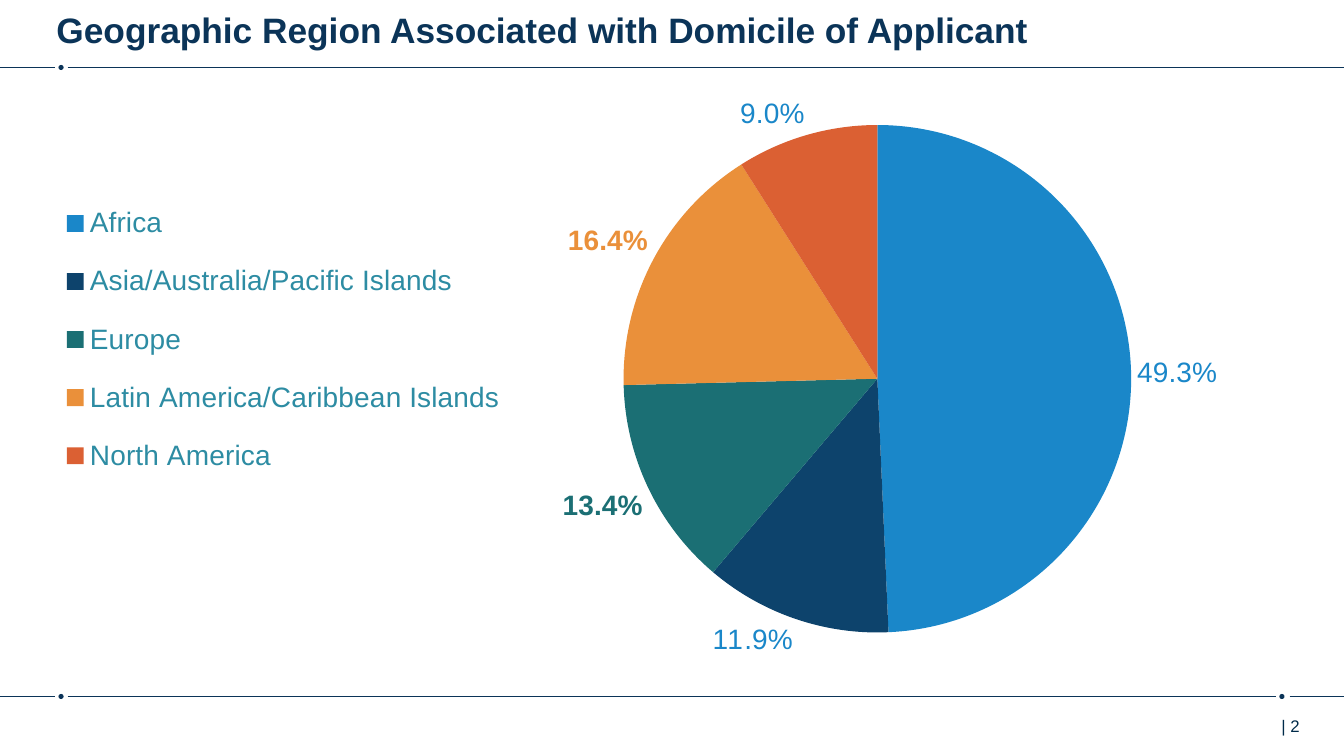
import pptx
import pptx.util
import pptx.chart.data
import pptx.dml.color
import pptx.enum.chart
import pptx.enum.shapes
import pptx.enum.text
import pptx.oxml
import pptx.oxml.ns

THEME = {
    "font": "Arial", "navy": "0B3458", "page": "002B49", "legend": "2D8CA3",
    "label": "1A87C9", "title_size": 25.2, "chart_size": 20, "page_size": 12,
}

presentation = pptx.Presentation()
presentation.slide_width = pptx.util.Inches(13.33)
presentation.slide_height = pptx.util.Inches(7.5)
slide = presentation.slides.add_slide(presentation.slide_layouts[5])
color = pptx.dml.color.RGBColor.from_string


def area(left, top, width, height):
    """Turn percentages of the slide into lengths."""
    across, down = presentation.slide_width / 100, presentation.slide_height / 100
    return [int(left * across), int(top * down), int(width * across), int(height * down)]


def set_font(font, size, hue, bold=False):
    values = {"name": THEME["font"], "size": pptx.util.Pt(size), "bold": bold}
    for name, value in values.items():
        setattr(font, name, value)
    font.color.rgb = color(hue)


# Rules broken by dots: height, line spans, dot centres
rules = [
    (8.93, [(0, 4.13), (5.03, 100)], [4.54]),
    (92.13, [(0, 4.13), (5.03, 94.97), (95.95, 100)], [4.54, 95.38]),
]
dot_width, dot_height = 0.38, 0.67
for height, spans, centres in rules:
    for start, end in spans:
        left, top, width, _ = area(start, height, end - start, 0)
        rule = slide.shapes.add_connector(
            pptx.enum.shapes.MSO_CONNECTOR.STRAIGHT, left, top, left + width, top)
        rule.line.color.rgb = color(THEME["navy"])
        rule.line.width = pptx.util.Pt(1)
        rule._element.spPr.append(pptx.oxml.parse_xml(
            f'<a:effectLst {pptx.oxml.ns.nsdecls("a")}/>'))
    for centre in centres:
        dot = slide.shapes.add_shape(
            pptx.enum.shapes.MSO_SHAPE.OVAL,
            *area(centre - dot_width / 2, height - dot_height / 2, dot_width, dot_height))
        dot.shadow.inherit = False
        dot.fill.solid()
        dot.fill.fore_color.rgb = color(THEME["navy"])
        dot.line.fill.background()

# Title and page number
title = slide.shapes.title
title.left, title.top, title.width, title.height = area(3.45, 0.67, 88.65, 6.53)
page = slide.shapes.add_textbox(*area(94.22, 94, 5.78, 5.33))
texts = [
    (title, "Geographic Region Associated with Domicile of Applicant",
     THEME["title_size"], THEME["navy"], True, pptx.enum.text.MSO_ANCHOR.MIDDLE),
    (page, "| 2", THEME["page_size"], THEME["page"], False, pptx.enum.text.MSO_ANCHOR.TOP),
]
for shape, words, size, hue, bold, anchor in texts:
    frame = shape.text_frame
    frame.text = words
    settings = {"word_wrap": True, "vertical_anchor": anchor,
                "auto_size": pptx.enum.text.MSO_AUTO_SIZE.NONE}
    for name, value in settings.items():
        setattr(frame, name, value)
    paragraph = frame.paragraphs[0]
    paragraph.alignment = pptx.enum.text.PP_ALIGN.LEFT
    set_font(paragraph.runs[0].font, size, hue, bold)
page.text_frame.margin_left = pptx.util.Inches(0.15)
page.text_frame.margin_right = 0

# Pie chart: region, share, slice colour, label colour, bold label
regions = [
    ("Africa", 0.493, "1A87C9", THEME["label"], False),
    ("Asia/Australia/Pacific Islands", 0.119, "0D436C", THEME["label"], False),
    ("Europe", 0.134, "1B6F74", "1B6F74", True),
    ("Latin America/Caribbean Islands", 0.164, "EA903A", "EA903A", True),
    ("North America", 0.09, "DB6033", THEME["label"], False),
]
data = pptx.chart.data.CategoryChartData(number_format="0.0%")
data.categories = [region[0] for region in regions]
data.add_series("Series 1", [region[1] for region in regions])
chart = slide.shapes.add_chart(
    pptx.enum.chart.XL_CHART_TYPE.PIE, *area(3.45, 10.53, 90.4, 79.07), data).chart
chart.has_title = False
set_font(chart.font, THEME["chart_size"], THEME["label"])
plot = chart.plots[0]
plot.vary_by_categories = True
plot.has_data_labels = True
outside = pptx.enum.chart.XL_LABEL_POSITION.OUTSIDE_END
label_values = {"show_value": True, "show_percentage": False, "number_format": "0.0%",
                "number_format_is_linked": False, "position": outside}
for name, value in label_values.items():
    setattr(plot.data_labels, name, value)
for index, (_, _, slice_color, label_color, bold) in enumerate(regions):
    point = plot.series[0].points[index]
    point.format.fill.solid()
    point.format.fill.fore_color.rgb = color(slice_color)
    point.format.line.fill.background()
    set_font(point.data_label.font, THEME["chart_size"], label_color, bold)
    point.data_label.position = outside

# Legend at the left, pie at the right
chart.has_legend = True
chart.legend.position = pptx.enum.chart.XL_LEGEND_POSITION.LEFT
chart.legend.include_in_layout = False
set_font(chart.legend.font, THEME["chart_size"], THEME["legend"])
chart_space = chart._chartSpace
layouts = [
    ("c:plotArea", 0, '<c:layoutTarget val="inner"/>', (0.475, 0.076, 0.418, 0.849)),
    ("c:legend", 1, "", (0, 0.17, 0.39, 0.53)),
]
for tag, place, target, shares in layouts:
    part = chart_space.find(f".//{pptx.oxml.ns.qn(tag)}")
    for old in part.findall(pptx.oxml.ns.qn("c:layout")):
        part.remove(old)
    modes = "".join(f'<c:{axis}Mode val="edge"/>' for axis in "xy")
    sizes = "".join(f'<c:{axis} val="{share}"/>' for axis, share in zip("xywh", shares))
    part.insert(place, pptx.oxml.parse_xml(
        f'<c:layout {pptx.oxml.ns.nsdecls("c")}><c:manualLayout>'
        f"{target}{modes}{sizes}</c:manualLayout></c:layout>"))

presentation.save("out.pptx")
